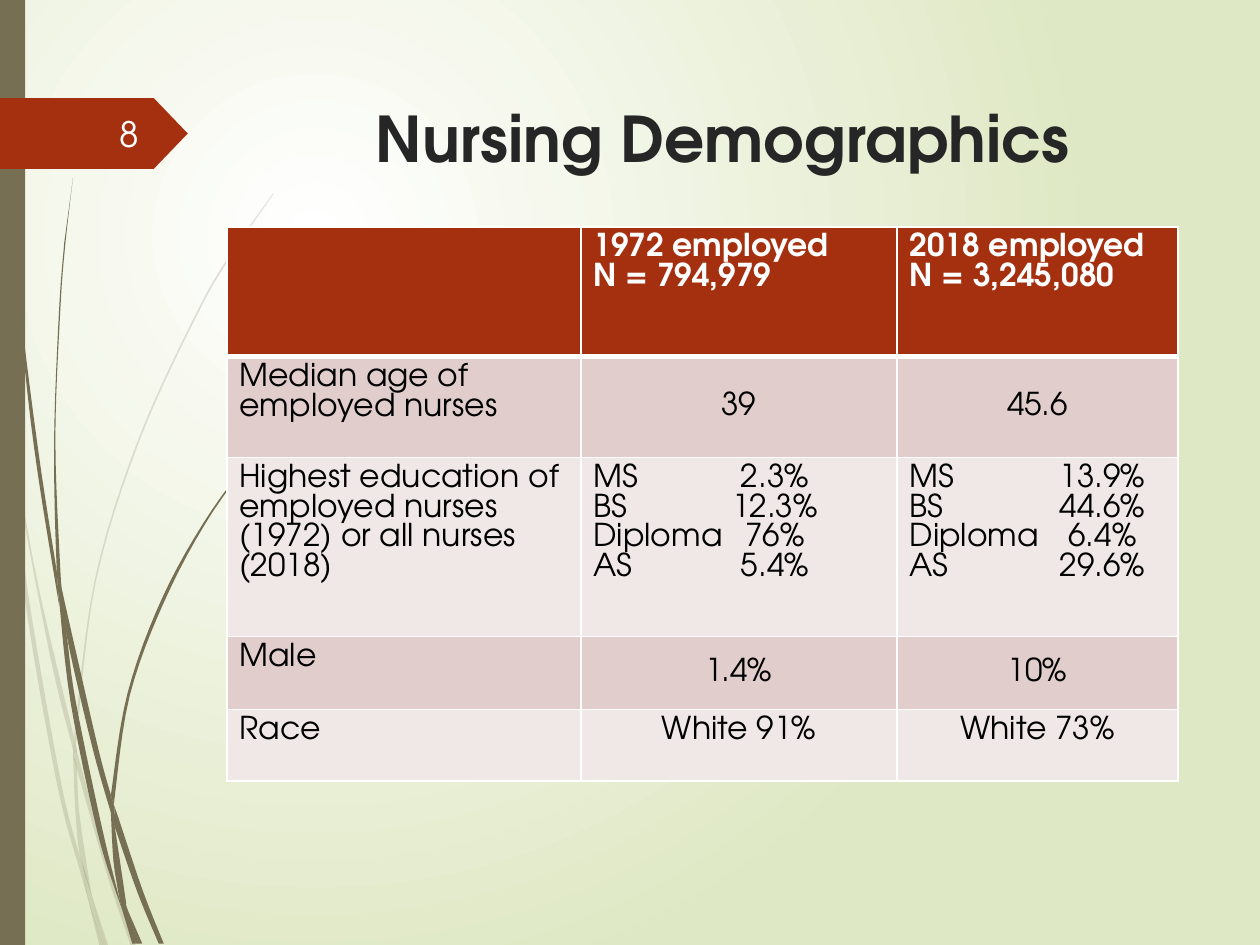
from dataclasses import dataclass

from lxml.etree import SubElement
from pptx import Presentation
from pptx.dml.color import RGBColor
from pptx.enum.shapes import MSO_SHAPE
from pptx.enum.text import MSO_ANCHOR, MSO_AUTO_SIZE, PP_ALIGN
from pptx.oxml.ns import qn
from pptx.util import Inches, Pt


@dataclass(frozen=True)
class Theme:
    font: str = "TeX Gyre Adventor"
    olive: str = "766F54"
    red: str = "A53010"
    white: str = "FFFFFF"
    pale_green: str = "DFE8C4"
    ink: str = "262626"
    black: str = "000000"
    bands: tuple = ("E1CDCC", "F0E8E7")
    title_size: int = 36
    number_size: int = 20
    table_size: int = 18
    table_leading: int = 17


# Grass blades: each has two edges that meet in a tip, as (x, y) in inches
FAINT_GRASS = [
    ([(0.08, 3.5), (0.06, 3.22), (0, 2.82)], [(0, 2.99), (0.07, 3.44), (0.08, 3.5)]),
    ([(0.1, 3.45), (0.19, 4.04), (0.3, 4.63), (0.43, 5.2), (0.59, 5.86)],
     [(0.59, 5.99), (0.4, 5.22), (0.12, 3.76)]),
    ([(0.61, 5.96), (0.64, 6.07), (0.88, 6.92), (1.08, 7.51)],
     [(1.04, 7.51), (0.85, 6.94), (0.61, 6.1)]),
    ([(0.73, 7.11), (0.86, 7.51)], [(0.83, 7.51), (0.73, 7.11)]),
    ([(0.08, 3.5), (0.12, 3.76), (0.22, 4.69), (0.48, 6.19), (0.64, 6.83), (0.7, 7.14)],
     [(0.64, 6.93), (0.45, 6.21), (0.19, 4.7), (0.08, 3.5)]),
    ([(0.58, 5.99), (0.6, 6.46), (0.64, 6.83), (0.73, 7.11)],
     [(0.72, 7.06), (0.63, 6.46), (0.61, 6.1), (0.58, 5.99)]),
    ([(0.61, 5.96), (0.61, 5.84), (0.76, 4.62), (1.11, 3.49), (1.59, 2.45), (1.87, 1.98), (2.17, 1.54)],
     [(2.17, 1.53), (1.86, 1.97), (1.58, 2.44), (1.1, 3.48), (0.75, 4.61), (0.59, 5.84)]),
    ([(0.7, 7.14), (0.79, 7.51)], [(0.82, 7.51), (0.7, 7.14)]),
    ([(0.61, 6.1), (0.61, 5.96), (0.59, 5.86)], [(0.58, 5.99), (0.61, 6.1)]),
    ([(0.65, 6.83), (0.7, 7.14), (0.82, 7.51)], [(0.83, 7.51), (0.73, 7.11), (0.65, 6.83)]),
]
DARK_GRASS = [
    ([(0.02, 0), (0.05, 1.1), (0.14, 2.33), (0.27, 3.55), (0.47, 4.81)],
     [(0.45, 4.53), (0.3, 3.55), (0.15, 2.32), (0.06, 1.09), (0.03, 0)]),
    ([(0.5, 4.72), (0.53, 5.05), (0.73, 5.92), (0.88, 6.45)],
     [(0.88, 6.31), (0.77, 5.9), (0.5, 4.72)]),
    ([(0.91, 6.41), (0.94, 6.49), (1.13, 7.06), (1.3, 7.49)],
     [(1.26, 7.49), (1.09, 7.08), (0.91, 6.56)]),
    ([(0.47, 4.77), (0.53, 5.05), (0.6, 5.56), (0.81, 6.57), (0.97, 7.22)],
     [(0.92, 7.08), (0.77, 6.59), (0.56, 5.57), (0.47, 4.77)]),
    ([(0.5, 4.72), (0.48, 4.53), (0.44, 3.49), (0.48, 2.45), (0.52, 1.93), (0.58, 1.41)],
     [(0.51, 1.93), (0.47, 2.45), (0.43, 3.49), (0.45, 4.49), (0.49, 4.72)]),
    ([(1, 7.19), (1.1, 7.49)], [(1.13, 7.49), (1, 7.19)]),
    ([(0.45, 4.49), (0.47, 4.77), (0.53, 5.05)], [(0.5, 4.72), (0.45, 4.49)]),
    ([(0.91, 6.41), (0.91, 6.33), (1.03, 5.52), (1.31, 4.76), (1.69, 4.06), (2.16, 3.44)],
     [(2.15, 3.44), (1.68, 4.05), (1.29, 4.74), (1.01, 5.51), (0.88, 6.31)]),
    ([(0.97, 7.22), (1.05, 7.49)], [(1.08, 7.49), (0.97, 7.22)]),
    ([(0.88, 6.45), (0.91, 6.91), (1, 7.19)], [(1, 7.16), (0.91, 6.56), (0.88, 6.45)]),
    ([(0.88, 6.45), (0.91, 6.56), (0.91, 6.41)], [(0.88, 6.31), (0.88, 6.45)]),
    ([(0.91, 6.91), (0.97, 7.22), (1.08, 7.49)], [(1.1, 7.49), (0.96, 7.06), (0.91, 6.91)]),
]

HEADER = ["", "1972 employed\nN = 794,979", "2018 employed N = 3,245,080"]
ROWS = [
    ["Median age of employed nurses", "39", "45.6"],
    ["Highest education of employed nurses (1972) or all nurses (2018)",
     "MS\t2.3%\nBS\t12.3%\nDiploma\t76%\nAS\t5.4%",
     "MS\t13.9%\nBS\t44.6%\nDiploma\t6.4%\nAS\t29.6%"],
    ["Male", "1.4%", "10%"],
    ["Race", "White 91%", "White 73%"],
]
COLUMN_WIDTHS = [2.81, 2.51, 2.23]
ROW_HEIGHTS = [1.03, 0.8, 1.42, 0.58, 0.57]
TAB_STOPS = {1: 1.44, 2: 1.53}  # centre of the percentages, by column


def smooth(points, steps=6):
    """Points along a Catmull-Rom curve through the given points."""
    padded = [points[0], *points, points[-1]]
    curve = [points[0]]
    for a, b, c, d in zip(padded, padded[1:], padded[2:], padded[3:]):
        for step in range(1, steps + 1):
            t = step / steps
            curve.append(tuple(
                q + t * (r - p) / 2 + t * t * (p - 2.5 * q + 2 * r - s / 2)
                + t ** 3 * (1.5 * (q - r) + (s - p) / 2)
                for p, q, r, s in zip(a, b, c, d)))
    return curve


def write_text(text_frame, text, *, font, size, color, bold=False,
               align=PP_ALIGN.LEFT, leading=None, tab=None):
    for index, line in enumerate(text.split("\n")):
        paragraph = text_frame.paragraphs[0] if index == 0 else text_frame.add_paragraph()
        paragraph.alignment = align
        if leading:
            paragraph.line_spacing = Pt(leading)
        if tab:
            tab_list = SubElement(paragraph._p.get_or_add_pPr(), qn("a:tabLst"))
            SubElement(tab_list, qn("a:tab"), pos=str(Inches(tab)), algn="ctr")
        run = paragraph.add_run()
        run.text = line
        run.font.name, run.font.size, run.font.bold = font, Pt(size), bold
        run.font.color.rgb = RGBColor.from_string(color)


class SlideBuilder:
    def __init__(self, presentation, theme):
        self.theme = theme
        self.slide = presentation.slides.add_slide(presentation.slide_layouts[5])

    def background(self, inner, outer):
        fill = self.slide.background.fill
        fill.gradient()
        for stop, color in zip(fill.gradient_stops, (inner, outer)):
            stop.color.rgb = RGBColor.from_string(color)
        gradient = self.slide.background._cSld.find(".//" + qn("a:gradFill"))
        gradient.remove(gradient.find(qn("a:lin")))
        circle = SubElement(gradient, qn("a:path"), {"path": "circle"})
        SubElement(circle, qn("a:fillToRect"), l="50000", t="50000", r="100000", b="100000")

    def paint(self, shape, color, opacity=100):
        shape.shadow.inherit = False
        shape.fill.solid()
        shape.fill.fore_color.rgb = RGBColor.from_string(color)
        shape.line.fill.background()
        if opacity < 100:
            rgb = shape._element.spPr.find(".//" + qn("a:srgbClr"))
            SubElement(rgb, qn("a:alpha"), val=str(opacity * 1000))

    def blade(self, edges, opacity):
        outline = [(Inches(x), Inches(y)) for edge in edges for x, y in smooth(edge)]
        builder = self.slide.shapes.build_freeform(*outline[0])
        builder.add_line_segments(outline[1:], close=True)
        self.paint(builder.convert_to_shape(), self.theme.olive, opacity)

    def block(self, kind, box, color):
        shape = self.slide.shapes.add_shape(kind, *map(Inches, box))
        self.paint(shape, color)
        return shape

    def title(self, text, box):
        shape = self.slide.shapes.title
        shape.left, shape.top, shape.width, shape.height = map(Inches, box)
        shape.text_frame.auto_size = MSO_AUTO_SIZE.NONE
        shape.text_frame.vertical_anchor = MSO_ANCHOR.MIDDLE
        write_text(shape.text_frame, text, font=self.theme.font, size=self.theme.title_size,
                   color=self.theme.ink, bold=True, align=PP_ALIGN.CENTER)

    def slide_number(self, text, box):
        frame = self.slide.shapes.add_textbox(*map(Inches, box)).text_frame
        frame.word_wrap = True
        frame.vertical_anchor = MSO_ANCHOR.MIDDLE
        write_text(frame, text, font=self.theme.font, size=self.theme.number_size,
                   color=self.theme.white, align=PP_ALIGN.RIGHT)

    def cell(self, cell, text, fill, color, bottom=1, **text_format):
        for side, width in zip("LRTB", (1, 1, 1, bottom)):
            line = SubElement(cell._tc.get_or_add_tcPr(), qn(f"a:ln{side}"), w=str(Pt(width)))
            SubElement(SubElement(line, qn("a:solidFill")), qn("a:srgbClr"), val=self.theme.white)
        cell.fill.solid()
        cell.fill.fore_color.rgb = RGBColor.from_string(fill)
        if text:
            write_text(cell.text_frame, text, font=self.theme.font, size=self.theme.table_size,
                       leading=self.theme.table_leading, color=color, **text_format)

    def table(self, left, top):
        theme = self.theme
        table = self.slide.shapes.add_table(
            len(ROW_HEIGHTS), len(COLUMN_WIDTHS), Inches(left), Inches(top),
            Inches(sum(COLUMN_WIDTHS)), Inches(sum(ROW_HEIGHTS))).table
        table.horz_banding = False
        for column, width in zip(table.columns, COLUMN_WIDTHS):
            column.width = Inches(width)
        for row, height in zip(table.rows, ROW_HEIGHTS):
            row.height = Inches(height)
        for column, text in enumerate(HEADER):
            self.cell(table.cell(0, column), text, theme.red, theme.white, bottom=3, bold=True)
        for row, texts in enumerate(ROWS, start=1):
            for column, text in enumerate(texts):
                cell = table.cell(row, column)
                tabbed = "\t" in text
                centred = column > 0 and not tabbed
                if centred and texts[0] != "Race":
                    cell.vertical_anchor = MSO_ANCHOR.MIDDLE
                self.cell(cell, text, theme.bands[(row - 1) % 2], theme.black,
                          align=PP_ALIGN.CENTER if centred else PP_ALIGN.LEFT,
                          tab=TAB_STOPS[column] if tabbed else None)


def main():
    presentation = Presentation()
    presentation.slide_width, presentation.slide_height = Inches(10), Inches(7.5)
    theme = Theme()
    builder = SlideBuilder(presentation, theme)

    # Backdrop: gradient, grass, side bar and number tag
    builder.background(theme.white, theme.pale_green)
    for blades, opacity in ((FAINT_GRASS, 20), (DARK_GRASS, 100)):
        for edges in blades:
            builder.blade(edges, opacity)
    builder.block(MSO_SHAPE.RECTANGLE, (0, 0, 0.2, 7.5), theme.olive)
    tag = builder.block(MSO_SHAPE.PENTAGON, (0, 0.78, 1.49, 0.56), theme.red)
    tag.adjustments[0] = 0.48

    # Content
    builder.title("Nursing Demographics", (2.13, 0.68, 7.21, 0.82))
    builder.slide_number("8", (0.56, 0.86, 0.64, 0.4))
    builder.table(1.8, 1.8)
    presentation.save("out.pptx")


if __name__ == "__main__":
    main()
